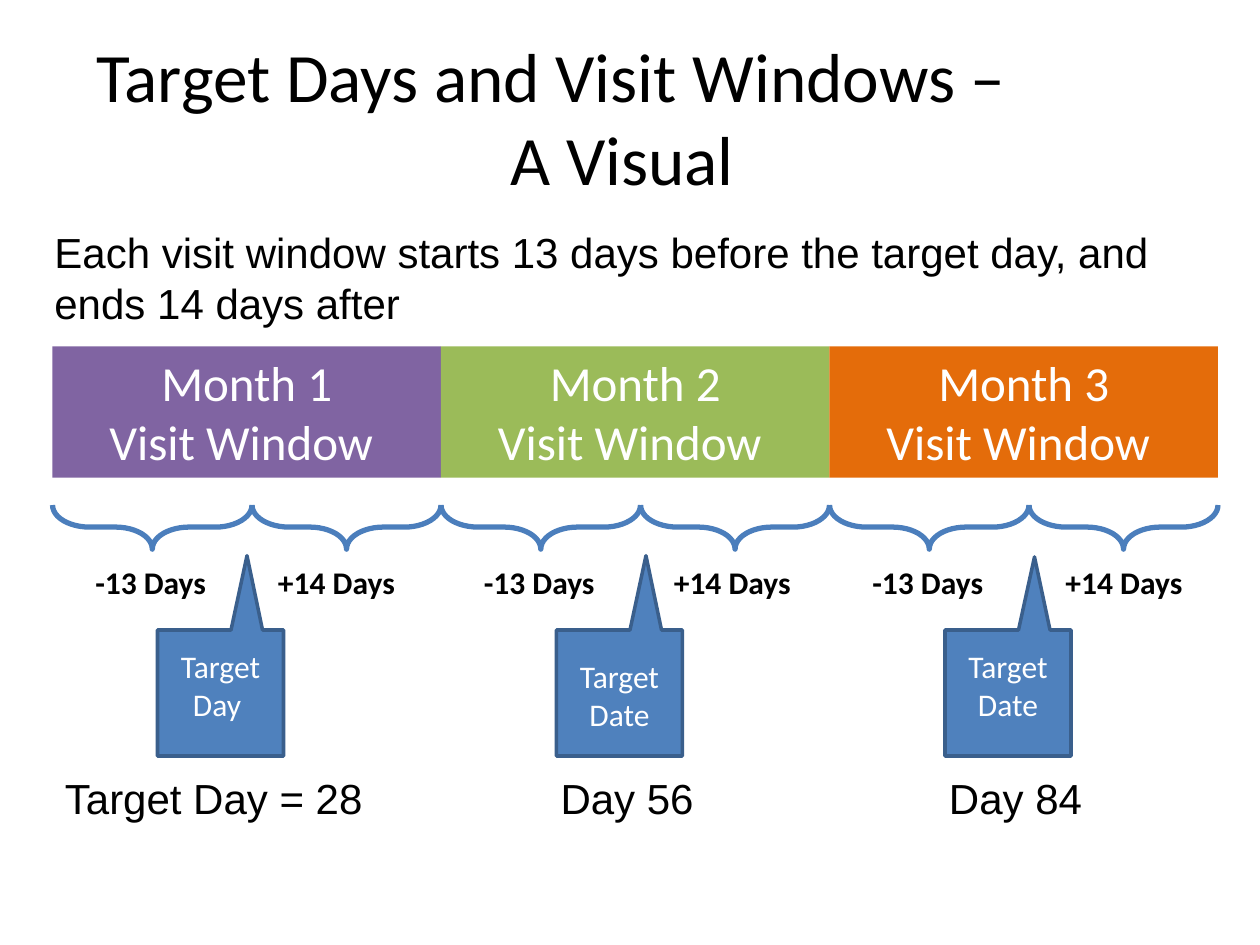
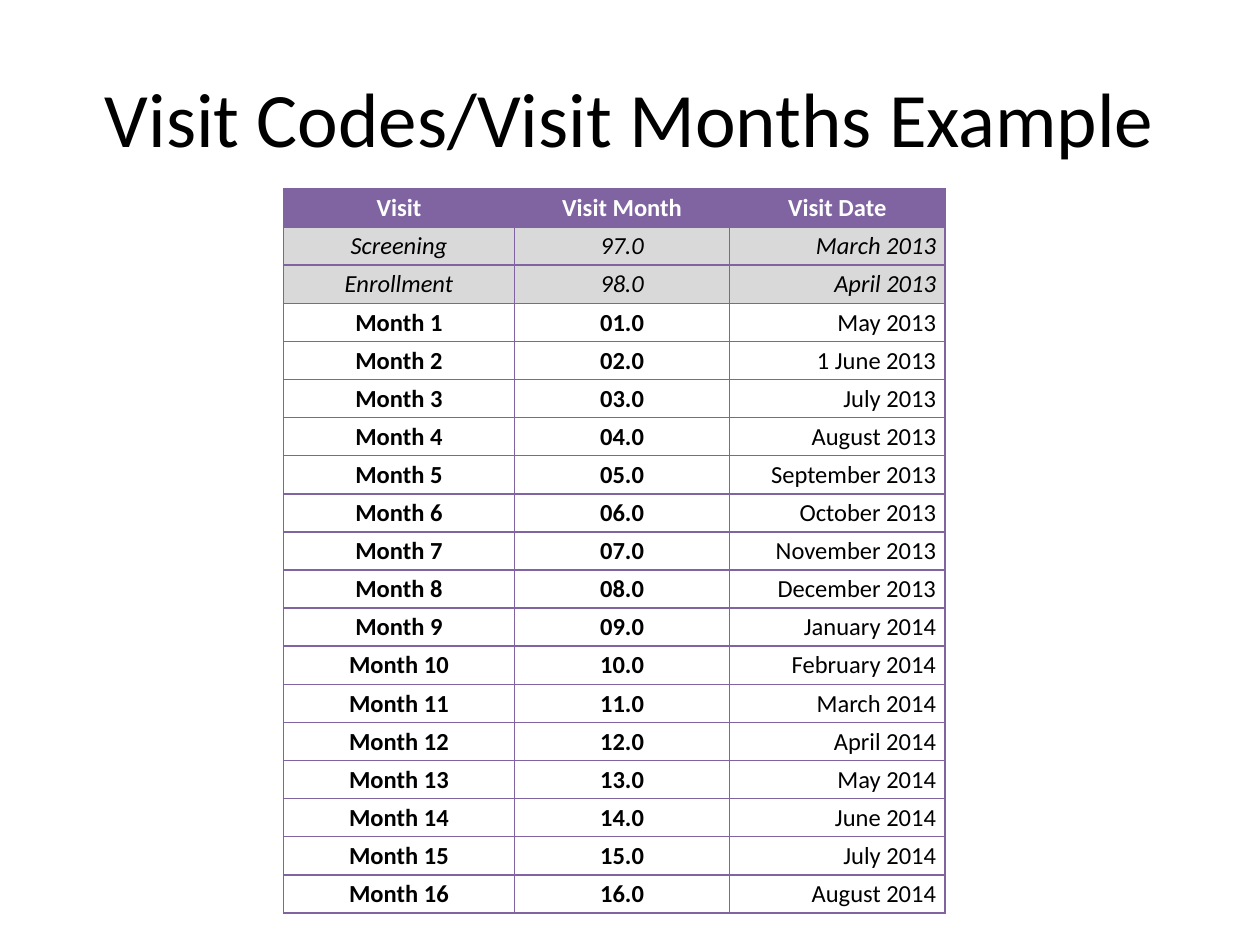
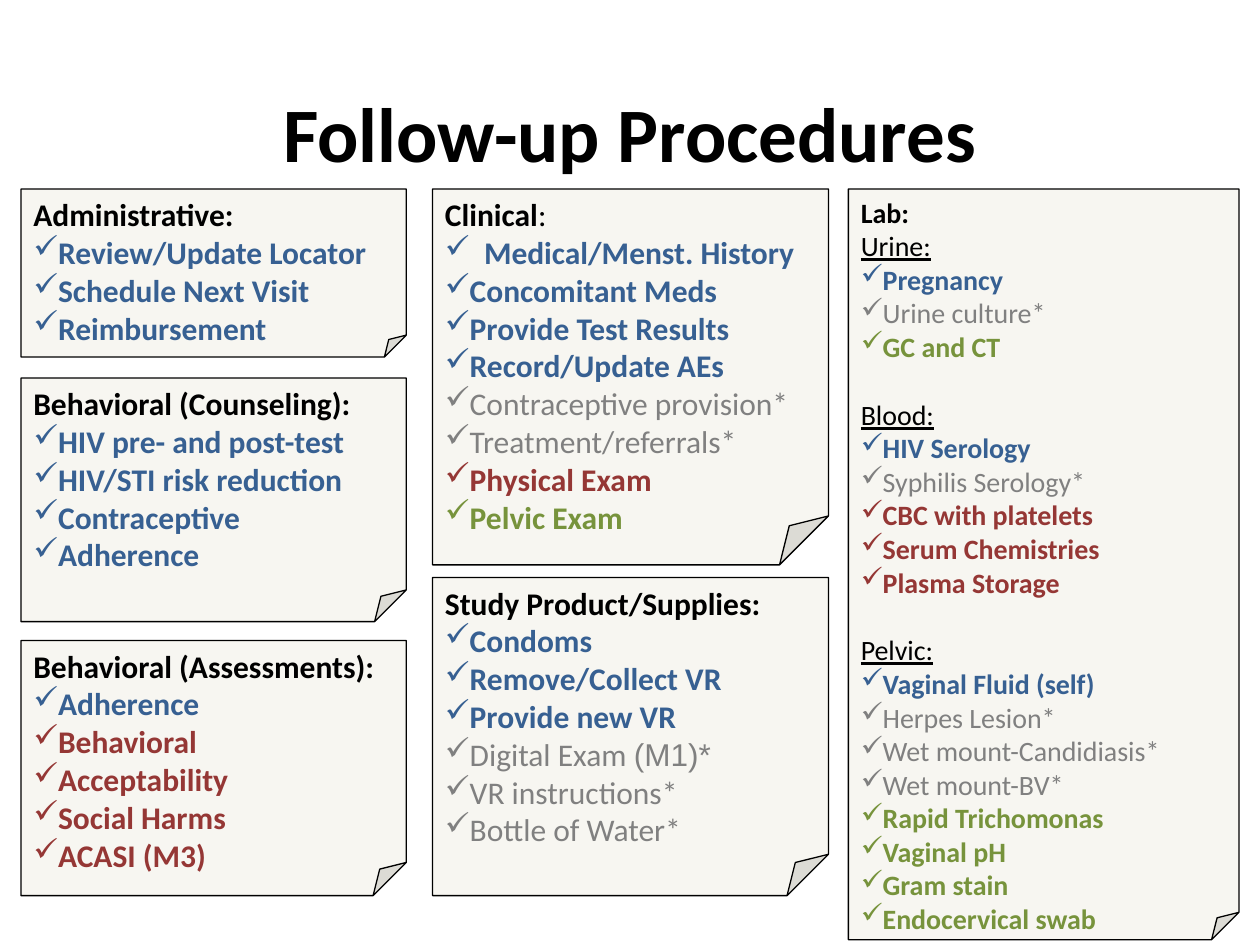
from pptx import Presentation
from pptx.dml.color import RGBColor
from pptx.enum.shapes import MSO_SHAPE
from pptx.enum.text import MSO_ANCHOR, PP_ALIGN
from pptx.oxml.ns import qn
from pptx.util import Inches, Pt
from lxml.etree import SubElement

BLACK = RGBColor(0x00, 0x00, 0x00)
WHITE = RGBColor(0xFF, 0xFF, 0xFF)
PURPLE = RGBColor(0x80, 0x64, 0xA2)
LIME = RGBColor(0x9B, 0xBB, 0x59)
ORANGE = RGBColor(0xE4, 0x6C, 0x0A)
BRACE = RGBColor(0x4B, 0x7E, 0xBC)
CALLOUT = RGBColor(0x4F, 0x81, 0xBD)
CALLOUT_EDGE = RGBColor(0x3A, 0x5F, 0x8C)
SILVER = RGBColor(0xD9, 0xD9, 0xD9)
PAPER = RGBColor(0xEE, 0xEC, 0xE1)
BLUE = RGBColor(0x37, 0x60, 0x92)
RED = RGBColor(0x95, 0x37, 0x35)
GREEN = RGBColor(0x77, 0x93, 0x3C)
GREY = RGBColor(0x80, 0x80, 0x80)

BODY, PLAIN = "Calibri", "Arial"
COLS, ROWS = 120, 90          # grid of twelfths of an inch
BULLET_INDENT = Inches(0.31)
MONTH_COLS = 37               # width of one visit window


def grid(n):
    return Inches(n / 12)


def box(x, y, w, h):
    return grid(x), grid(y), grid(w), grid(h)


# ---- text ----
def add_run(p, text, size, color=BLACK, bold=False, font=BODY, italic=False,
            underline=False):
    r = p.add_run()
    r.text = text
    f = r.font
    f.name, f.size, f.bold, f.italic = font, Pt(size), bold, italic
    f.underline = underline
    f.color.rgb = color
    return r


def next_paragraph(tf, align=PP_ALIGN.LEFT):
    first = tf.paragraphs[0]
    p = tf.add_paragraph() if first.runs else first
    p.alignment = align
    return p


def add_text(slide, area, text, size, align=PP_ALIGN.LEFT, wrap=True, **style):
    tf = slide.shapes.add_textbox(*box(*area)).text_frame
    tf.word_wrap = wrap
    add_run(next_paragraph(tf, align), text, size, **style)
    return tf


def add_title(slide, text, area=(6, 3.6, 108, 15), size=44, **style):
    tf = add_text(slide, area, text, size, PP_ALIGN.CENTER, **style)
    tf.vertical_anchor = MSO_ANCHOR.MIDDLE
    return tf


def add_bullet(p, hanging=False):
    pPr = p._p.get_or_add_pPr()
    pPr.set("marL", str(BULLET_INDENT if hanging else 0))
    pPr.set("indent", str(-BULLET_INDENT))
    SubElement(pPr, qn("a:buChar")).set("char", "✓")


def add_tabs(p, stops):
    tabs = SubElement(p._p.get_or_add_pPr(), qn("a:tabLst"))
    for stop in stops:
        tab = SubElement(tabs, qn("a:tab"))
        tab.set("pos", str(grid(stop)))
        tab.set("algn", "l")


# ---- shapes ----
def set_adjustments(sp, values):
    geom = sp._element.spPr.find(qn("a:prstGeom"))
    for old in list(geom):
        geom.remove(old)
    guides = SubElement(geom, qn("a:avLst"))
    for i, value in enumerate(values, 1):
        gd = SubElement(guides, qn("a:gd"))
        gd.set("name", f"adj{i}" if len(values) > 1 else "adj")
        gd.set("fmla", f"val {round(value * 100000)}")


def add_shape(slide, kind, area, fill=None, line=None, width=1, adj=(), rotation=0):
    sp = slide.shapes.add_shape(kind, *box(*area))
    sp.shadow.inherit = False
    sp.rotation = rotation
    if adj:
        set_adjustments(sp, adj)
    if fill is None:
        sp.fill.background()
    else:
        sp.fill.solid()
        sp.fill.fore_color.rgb = fill
    if line is None:
        sp.line.fill.background()
    else:
        sp.line.color.rgb = line
        sp.line.width = Pt(width)
    sp.text_frame.word_wrap = True
    sp.text_frame.vertical_anchor = MSO_ANCHOR.TOP
    return sp


def add_brace(slide, x, span, center_y=50.2, depth=4.2):
    area = (x + (span - depth) / 2, center_y - span / 2, depth, span)
    add_shape(slide, MSO_SHAPE.RIGHT_BRACE, area, line=BRACE, width=3,
              adj=(0.835, 0.5), rotation=90)


def add_window(slide, x, name, color):
    tf = add_shape(slide, MSO_SHAPE.RECTANGLE, (x, 33, MONTH_COLS, 12.5), color).text_frame
    for line in (name, "Visit Window "):
        add_run(next_paragraph(tf, PP_ALIGN.CENTER), line, 28, WHITE)


def add_target(slide, x, text, text_y, tip):
    add_shape(slide, MSO_SHAPE.RECTANGULAR_CALLOUT, (x, 60, 12, 12), CALLOUT,
              CALLOUT_EDGE, 2, adj=(-0.21, tip), rotation=180)
    add_text(slide, (x + 1, text_y, 10, 8.5), text, 18, PP_ALIGN.CENTER, color=WHITE)


def add_note(slide, area, heading, groups, size=18, fold=0.13):
    """Folded note; groups are (subheading, [(color, items)])."""
    sp = add_shape(slide, MSO_SHAPE.FOLDED_CORNER, area, PAPER, BLACK, 0.75, adj=(fold,))
    color = sp._element.spPr.find(qn("a:solidFill"))[0]
    SubElement(color, qn("a:alpha")).set("val", "46000")
    tf = sp.text_frame
    p = next_paragraph(tf)
    for text, bold in heading:
        add_run(p, text, size, bold=bold)
    for i, (subheading, lists) in enumerate(groups):
        if subheading:
            p = next_paragraph(tf)
            p.space_before = Pt(size * 1.22 if i else 0)
            add_run(p, subheading, size, underline=True)
        for color, items in lists:
            for item in items:
                p = next_paragraph(tf)
                add_bullet(p, hanging=item.startswith("Medical"))
                text, mark, rest = item.partition("(M1)*")
                add_run(p, text, size, color, color != GREY)
                if mark:
                    add_run(p, mark + rest, size, color, font=PLAIN)


# ---- table ----
def set_borders(cell, color, width=1):
    tcPr = cell._tc.get_or_add_tcPr()
    for i, side in enumerate(("a:lnL", "a:lnR", "a:lnT", "a:lnB")):
        ln = SubElement(tcPr, qn(side))
        ln.set("w", str(Pt(width)))
        fill = SubElement(ln, qn("a:solidFill"))
        SubElement(fill, qn("a:srgbClr")).set("val", str(color))
        tcPr.insert(i, ln)


def add_cell(cell, text, align, fill=None, **style):
    cell.margin_left = cell.margin_right = Inches(0.07)
    cell.margin_top = cell.margin_bottom = 0
    if fill is None:
        cell.fill.background()
    else:
        cell.fill.solid()
        cell.fill.fore_color.rgb = fill
    set_borders(cell, PURPLE)
    p = next_paragraph(cell.text_frame, align)
    p.line_spacing = 1.15
    add_run(p, text, 14, **style)


def visit_rows():
    names = ("January February March April May June July August September "
             "October November December").split()
    rows = [("Visit", "Visit Month", "Visit Date"),
            ("Screening", "97.0", "March 2013"),
            ("Enrollment", "98.0", "April 2013")]
    for n in range(1, 17):
        years, month = divmod(n + 3, 12)
        day = "1 " if n == 2 else ""
        rows.append((f"Month {n}", f"{n:02d}.0", f"{day}{names[month]} {2013 + years}"))
    return rows


def add_visit_table(slide, area, col_widths):
    rows = visit_rows()
    table = slide.shapes.add_table(len(rows), len(col_widths), *box(*area)).table
    table.first_row = table.horz_banding = False
    for col, width in zip(table.columns, col_widths):
        col.width = grid(width)
    for i, row in enumerate(rows):
        table.rows[i].height = grid(area[3] / len(rows))
        for j, text in enumerate(row):
            is_date = j == 2
            align = PP_ALIGN.RIGHT if is_date and i else PP_ALIGN.CENTER
            if i == 0:
                style = dict(fill=PURPLE, color=WHITE, bold=True)
            elif i < 3:
                style = dict(fill=SILVER, italic=True)
            else:
                style = dict(bold=not is_date)
            add_cell(table.cell(i, j), text, align, **style)


# ---- slides ----
def windows_slide(slide):
    tf = add_title(slide, "Target Days and Visit Windows –", size=39.6)
    first = tf.paragraphs[0]
    first.alignment = PP_ALIGN.LEFT
    first._p.get_or_add_pPr().set("marL", str(grid(2)))
    add_run(next_paragraph(tf, PP_ALIGN.CENTER), "A Visual ", 39.6)

    add_text(slide, (4, 21, 111, 11), "Each visit window starts 13 days before the "
             "target day, and ends 14 days after", 24, font=PLAIN)

    months = [(PURPLE, 25.3, 15, "Target Day ", 61, 1.09),
              (LIME, 63, 53, "Target Date", 62, 1.09),
              (ORANGE, 100.3, 90, "Target Date", 61, 1.08)]
    for i, (color, after_x, target_x, target, text_y, tip) in enumerate(months):
        x = 5 + i * MONTH_COLS
        add_window(slide, x, f"Month {i + 1}", color)
        add_brace(slide, x, 19)
        add_brace(slide, x + 19, 18)
        for label_x, label in ((x + 2.9, "-13 Days"), (after_x, "+14 Days")):
            add_text(slide, (label_x, 53, 13.5, 4.8), label, 18, wrap=False, bold=True)
        add_target(slide, target_x, target, text_y, tip)

    tf = add_text(slide, (5, 73, 111, 11), "Target Day = 28\tDay 56\tDay 84", 24, font=PLAIN)
    add_tabs(tf.paragraphs[0], (47.2, 84.2))


def codes_slide(slide):
    add_title(slide, "Visit Codes/Visit Months Example")
    add_visit_table(slide, (27, 18, 63, 69), (22, 20.5, 20.5))


def procedures_slide(slide):
    add_title(slide, "Follow-up Procedures", (6, 7, 108, 11), bold=True)

    # Left column
    left, left_w = 2, 36.7
    add_note(slide, (left, 18, left_w, 16), [("Administrative:", True)], [
        (None, [(BLUE, ["Review/Update Locator", "Schedule Next Visit", "Reimbursement"])])])
    add_note(slide, (left, 36, left_w, 23.2), [("Behavioral (Counseling):", True)], [
        (None, [(BLUE, ["HIV pre- and post-test", "HIV/STI risk reduction",
                        "Contraceptive", "Adherence"])])])
    add_note(slide, (left, 61, left_w, 24.3), [("Behavioral (Assessments):", True)], [
        (None, [(BLUE, ["Adherence"]),
                (RED, ["Behavioral", "Acceptability", "Social Harms", "ACASI (M3)"])])])

    # Middle column
    middle, middle_w = 41.2, 37.7
    add_note(slide, (middle, 18, middle_w, 35.8), [("Clinical", True), (":", False)], [
        (None, [(BLUE, ["Medical/Menst. History", "Concomitant Meds",
                        "Provide Test Results", "Record/Update AEs"]),
                (GREY, ["Contraceptive provision*", "Treatment/referrals*"]),
                (RED, ["Physical Exam"]),
                (GREEN, ["Pelvic Exam"])])])
    add_note(slide, (middle, 55, middle_w, 30.3), [("Study Product/Supplies:", True)], [
        (None, [(BLUE, ["Condoms", "Remove/Collect VR", "Provide new VR"]),
                (GREY, ["Digital Exam (M1)*", "VR instructions*", "Bottle of Water*"])])])

    # Right column
    add_note(slide, (80.8, 18, 37.2, 71.5), [("Lab:", True)], [
        ("Urine:", [(BLUE, ["Pregnancy"]), (GREY, ["Urine culture*"]),
                    (GREEN, ["GC and CT"])]),
        ("Blood:", [(BLUE, ["HIV Serology"]), (GREY, ["Syphilis Serology*"]),
                    (RED, ["CBC with platelets", "Serum Chemistries", "Plasma Storage"])]),
        ("Pelvic:", [(BLUE, ["Vaginal Fluid (self)"]),
                     (GREY, ["Herpes Lesion*", "Wet mount-Candidiasis*", "Wet mount-BV*"]),
                     (GREEN, ["Rapid Trichomonas", "Vaginal pH", "Gram stain",
                              "Endocervical swab"])]),
    ], size=16, fold=0.07)


def main():
    prs = Presentation()
    prs.slide_width, prs.slide_height = grid(COLS), grid(ROWS)
    for build in (windows_slide, codes_slide, procedures_slide):
        build(prs.slides.add_slide(prs.slide_layouts[6]))
    prs.save("out.pptx")


if __name__ == "__main__":
    main()
